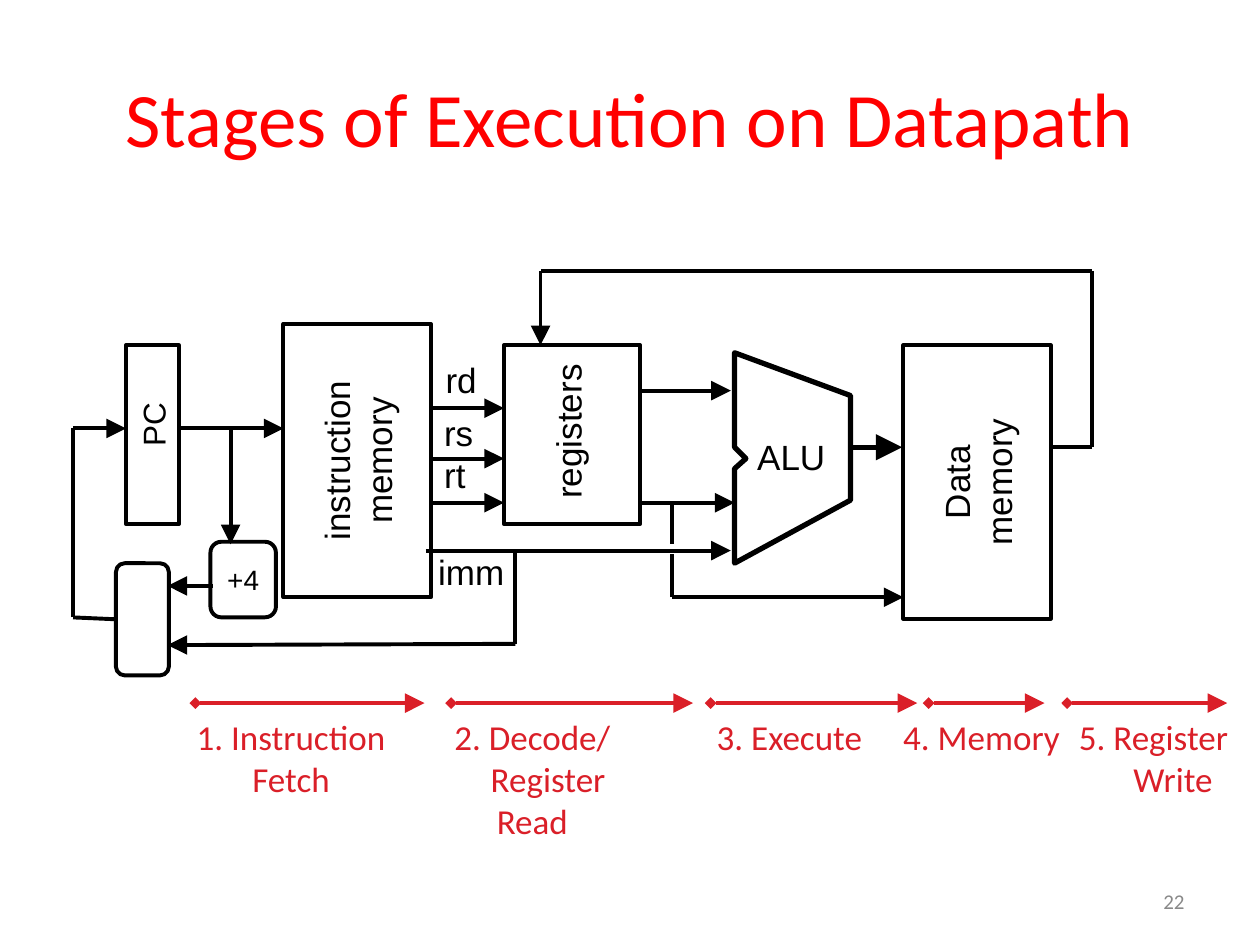
from lxml import etree
from pptx import Presentation
from pptx import util as u
from pptx.dml.color import RGBColor
from pptx.enum import shapes, text
from pptx.oxml.ns import qn

COLORS = {
    "ink": "000000",
    "paper": "FFFFFF",
    "title": "FF0000",
    "stage": "DA1F28",
    "number": "898989",
}
TURNED = 270
RECT = shapes.MSO_SHAPE.RECTANGLE
ROUNDED = shapes.MSO_SHAPE.ROUNDED_RECTANGLE


def rgb(name):
    """Return the palette colour of that name."""
    return RGBColor.from_string(COLORS[name])


def write(shape, content, size=20, font="Arial", color="ink",
          align=text.PP_ALIGN.CENTER, anchor=text.MSO_ANCHOR.MIDDLE, second_indent=0):
    """Write one paragraph per line, indenting the second by second_indent inches."""
    frame = shape.text_frame
    frame.word_wrap = True
    frame.vertical_anchor = anchor
    for index, line in enumerate(content.split("\n")):
        paragraph = frame.add_paragraph() if index else frame.paragraphs[0]
        paragraph.alignment = align
        if index == 1 and second_indent:
            paragraph._p.get_or_add_pPr().set("marL", str(u.Inches(second_indent)))
        run = paragraph.add_run()
        run.text = line
        run.font.size = u.Pt(size)
        run.font.name = font
        run.font.color.rgb = rgb(color)


def label(slide, box, content, rotation=0, **style):
    """Place free-standing text in a box given in inches."""
    caption = slide.shapes.add_textbox(*map(u.Inches, box))
    caption.rotation = rotation
    write(caption, content, **style)


def block(slide, box, content="", kind=RECT, turned=False, **style):
    """Draw an outlined unit that covers the box, its text turned if asked."""
    left, top, width, height = box
    if turned:
        left, top = left + (width - height) / 2, top + (height - width) / 2
        width, height = height, width
    unit = slide.shapes.add_shape(kind, *map(u.Inches, (left, top, width, height)))
    unit.rotation = TURNED if turned else 0
    unit.shadow.inherit = False
    unit.fill.solid()
    unit.fill.fore_color.rgb = rgb("paper")
    unit.line.color.rgb = rgb("ink")
    unit.line.width = u.Pt(2.25)
    if content:
        write(unit, content, **style)
    return unit


def place(origin, points):
    """Convert points measured from origin in inches to slide lengths."""
    return [(u.Inches(origin[0] + x), u.Inches(origin[1] + y)) for x, y in points]


def wire(slide, origin, points, arrow=True, width=2.25, color="ink", head=None):
    """Draw straight segments through points measured from origin."""
    spots = place(origin, points)
    segments = []
    for start, end in zip(spots, spots[1:]):
        segment = slide.shapes.add_connector(
            shapes.MSO_CONNECTOR.STRAIGHT, *start, *end)
        segment.line.color.rgb = rgb(color)
        segment.line.width = u.Pt(width)
        etree.SubElement(segment._element.spPr, qn("a:effectLst"))
        segments.append(segment)
    outline = segments[-1].line._get_or_add_ln()
    if head:
        etree.SubElement(outline, qn("a:headEnd"), type=head)
    if arrow:
        etree.SubElement(outline, qn("a:tailEnd"), type="triangle", w="lg", len="lg")
    return segments


def fetch_unit(slide, left, top):
    """Draw the program counter, instruction memory and next-address loop."""
    origin = (left, top)
    block(slide, (left + 0.42, top + 0.17, 0.42, 1.42))
    label(slide, (left + 0.36, top + 0.6, 0.55, 0.4), "PC", TURNED, size=18)
    block(slide, (left + 1.67, top, 1.17, 2.17), "instruction\nmemory", turned=True)
    block(slide, (left + 1.09, top + 1.73, 0.52, 0.6), "+4", ROUNDED, size=16)
    selector = block(slide, (left + 0.34, top + 1.9, 0.42, 0.89), kind=ROUNDED)
    wire(slide, origin, [(0.84, 0.83), (1.67, 0.83)])
    wire(slide, origin, [(1.25, 0.83), (1.25, 1.75)])
    wire(slide, origin, [(1.11, 2.08), (0.75, 2.08)])
    loop = wire(slide, origin, [(0.34, 2.34), (0, 2.33), (0, 0.83), (0.42, 0.83)])
    loop[0].begin_connect(selector, 1)


def decode_unit(slide, left, top):
    """Draw the register file, its inputs and the immediate value."""
    origin = (left, top)
    block(slide, (left + 0.58, top, 1.08, 1.42))
    label(slide, (left + 0.37, top + 0.47, 1.43, 0.43), "registers", TURNED)
    for field, wire_y, label_x, label_y in (
            ("rd", 0.5, -0.05, 0.06), ("rs", 0.9, -0.07, 0.48), ("rt", 1.25, -0.1, 0.81)):
        wire(slide, origin, [(0, wire_y), (0.58, wire_y)])
        label(slide, (left + label_x, top + label_y, 0.58, 0.43), field)
    label(slide, (left - 0.14, top + 1.58, 0.92, 0.43), "imm")
    wire(slide, origin, [(-0.04, 1.63), (2.38, 1.63)])
    wire(slide, origin, [(0.67, 1.63), (0.67, 2.37), (-2.09, 2.38)])


def execute_unit(slide, left, top):
    """Draw the ALU with its operands, result and store-data wire."""
    origin = (left, top)
    corners = place(origin, [(0.75, 0.06), (1.67, 0.4), (1.67, 1.23), (0.75, 1.73),
                             (0.75, 0.98), (0.84, 0.9), (0.75, 0.81)])
    builder = slide.shapes.build_freeform(*corners[0])
    builder.add_line_segments(corners[1:], close=True)
    alu = builder.convert_to_shape()
    alu.shadow.inherit = False
    alu.fill.background()
    alu.line.color.rgb = rgb("ink")
    alu.line.width = u.Pt(3)
    label(slide, (left + 0.68, top + 0.67, 1.04, 0.52), "ALU",
          anchor=text.MSO_ANCHOR.TOP)
    wire(slide, origin, [(1.67, 0.81), (2.08, 0.81)], width=3)
    wire(slide, origin, [(0, 0.36), (0.72, 0.36)])
    wire(slide, origin, [(0, 1.25), (0.75, 1.25)])
    wire(slide, origin, [(0.25, 1.25), (0.25, 1.58)], arrow=False)
    wire(slide, origin, [(0.25, 1.66), (0.25, 2), (2.09, 2)])


def memory_unit(slide, left, top):
    """Draw the data memory and the write-back wire to the registers."""
    block(slide, (left, top, 1.17, 2.17), "Data\nmemory", turned=True)
    wire(slide, (left, top), [(1.16, 0.81), (1.5, 0.81), (1.5, -0.59),
                              (-2.88, -0.59), (-2.88, 0)])


def stage(slide, left, top, length, content, offset, width, second_indent=0):
    """Draw one stage arrow with its caption below."""
    wire(slide, (left, top), [(0, 0), (length, 0)], color="stage", head="diamond")
    height = 0.1 + 0.33 * len(content.split("\n"))
    label(slide, (left + offset, top + 0.05, width, height), content, font="Calibri",
          color="stage", anchor=text.MSO_ANCHOR.TOP, second_indent=second_indent)


def datapath_slide(deck):
    """Build the slide with title, datapath, stages and page number."""
    slide = deck.slides.add_slide(deck.slide_layouts[5])
    title = slide.shapes.title
    title.left, title.top, title.width, title.height = map(u.Inches, (0.5, 0.3, 9, 1.25))
    write(title, "Stages of Execution on Datapath", size=44, font="Calibri", color="title")
    fetch_unit(slide, 0.58, 2.57)
    decode_unit(slide, 3.42, 2.74)
    execute_unit(slide, 5.08, 2.74)
    memory_unit(slide, 7.17, 2.74)
    for left, length, content, offset, width, second_indent in (
            (1.55, 1.82, "1. Instruction\nFetch", -0.25, 2.02, 0),
            (3.58, 1.92, "2. Decode/\nRegister\nRead", -0.21, 1.71, 0.25),
            (5.64, 1.64, "3. Execute", -0.1, 1.45, 0),
            (7.37, 0.92, "4. Memory", -0.39, 1.62, 0),
            (8.47, 1.27, "5. Register\nWrite", -0.08, 1.53, 0.31)):
        stage(slide, left, 5.58, length, content, offset, width, second_indent)
    label(slide, (7.17, 6.95, 2.33, 0.4), "22", size=12, font="Calibri",
          color="number", align=text.PP_ALIGN.RIGHT)


def main():
    """Create and save the presentation."""
    deck = Presentation()
    deck.slide_width, deck.slide_height = u.Inches(10), u.Inches(7.5)
    datapath_slide(deck)
    deck.save("out.pptx")


if __name__ == "__main__":
    main()
